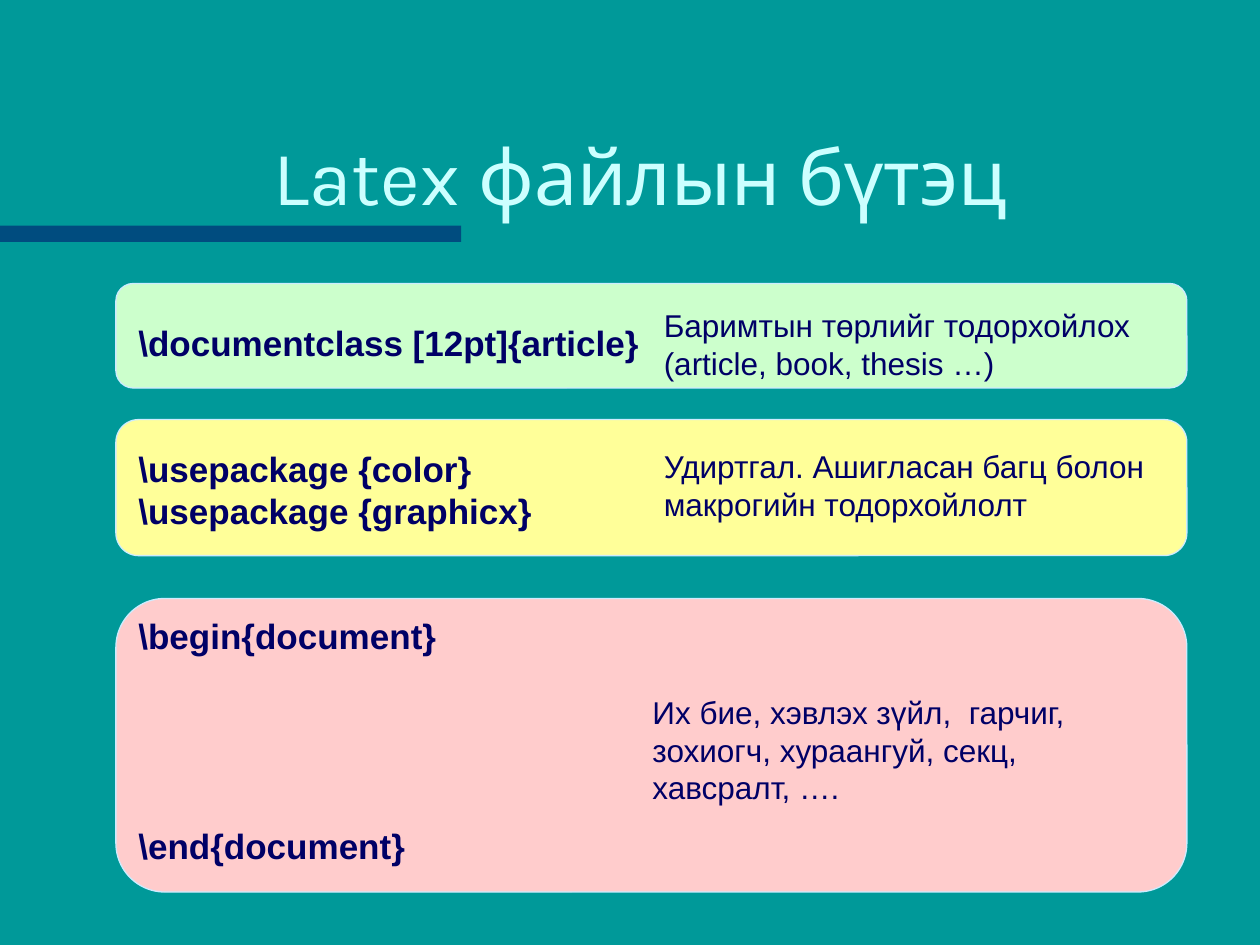
from lxml import etree
from pptx import Presentation
from pptx.dml.color import RGBColor
from pptx.enum.shapes import MSO_SHAPE
from pptx.enum.text import MSO_ANCHOR, PP_ALIGN
from pptx.oxml.ns import qn
from pptx.util import Inches, Pt

RECT, ROUNDED = MSO_SHAPE.RECTANGLE, MSO_SHAPE.ROUNDED_RECTANGLE
MIDDLE, CENTER, LEFT = MSO_ANCHOR.MIDDLE, PP_ALIGN.CENTER, PP_ALIGN.LEFT

NAVY = "000066"
PANEL_X, PANEL_W = 0.92, 8.5
CODE_X, CODE_W, CODE_SIZE = 1, 4.2, 20
NOTE_W, NOTE_SIZE = 4.17, 18
LINE = 1.2  # line pitch as a share of the text size

# Panel: top, height, fill; code: top, lines, gap between lines in lines;
# note: left, top, text
SECTIONS = [
    ((2.25, 0.83, "CCFFCC"),
     (2.5, ["\\documentclass [12pt]{article}"], 0),
     (5.17, 2.38, "Баримтын төрлийг тодорхойлох (article, book, thesis …)")),
    ((3.33, 1.08, "FFFF99"),
     (3.5, ["\\usepackage {color}", "\\usepackage {graphicx}"], 0),
     (5.17, 3.5, "Удиртгал. Ашигласан багц болон макрогийн тодорхойлолт")),
    ((4.75, 2.33, "FFCCCC"),
     (4.83, ["\\begin{document}", "\\end{document}"], 4),
     (5.08, 5.45, "Их бие, хэвлэх зүйл,  гарчиг, зохиогч, хураангуй, "
                  "секц, хавсралт, ….")),
]


def rgb(value):
    return RGBColor.from_string(value)


def box(*lengths):
    return [Inches(v) for v in lengths]


def set_font(p, name, size, color, bold=False):
    p.font.name, p.font.size, p.font.bold = name, Pt(size), bold
    p.font.color.rgb = rgb(color)


def add_title(s, text):
    title = s.shapes.title
    title.left, title.top, title.width, title.height = box(1.75, 0.76, 6.67, 1.25)
    tf = title.text_frame
    tf.text = text
    tf.vertical_anchor = MIDDLE
    p = tf.paragraphs[0]
    p.alignment = CENTER
    set_font(p, "Karla", 44, "CCFFFF")


def add_panel(s, kind, left, top, width, height, fill, line=None):
    sp = s.shapes.add_shape(kind, *box(left, top, width, height))
    sp.shadow.inherit = False
    sp.fill.solid()
    sp.fill.fore_color.rgb = rgb(fill)
    if line:
        sp.line.color.rgb = rgb(line)
        sp.line.width = Pt(0.75)
    else:
        sp.line.fill.background()
    return sp


def set_alpha(sp, percent):
    color = sp.fill._xPr.find(".//" + qn("a:srgbClr"))
    etree.SubElement(color, qn("a:alpha")).set("val", str(percent * 1000))


def add_text(s, left, top, width, lines, size, bold=False, gap=0):
    pitch = size * LINE
    height = (len(lines) + gap * (len(lines) - 1)) * pitch / 72 + 0.1
    tf = s.shapes.add_textbox(*box(left, top, width, height)).text_frame
    tf.word_wrap = True
    for i, line in enumerate(lines):
        p = tf.add_paragraph() if i else tf.paragraphs[0]
        p.text = line
        p.alignment = LEFT
        p.line_spacing = Pt(pitch)
        p.space_before = Pt(gap * pitch if i else 0)
        set_font(p, "Arial", size, NAVY, bold)


def main():
    prs = Presentation()
    prs.slide_width, prs.slide_height = box(10, 7.5)
    s = prs.slides.add_slide(prs.slide_layouts[5])
    s.background.fill.solid()
    s.background.fill.fore_color.rgb = rgb("009999")

    # Title and the half-transparent bar under it
    add_title(s, "Latex файлын бүтэц")
    bar = add_panel(s, RECT, 0, 1.79, 3.66, 0.13, NAVY)
    set_alpha(bar, 50)

    # One panel per part of the file: code left, explanation right
    for (top, height, fill), (code_y, code, gap), (note_x, note_y, note) in SECTIONS:
        add_panel(s, ROUNDED, PANEL_X, top, PANEL_W, height, fill, "CCECFF")
        add_text(s, CODE_X, code_y, CODE_W, code, CODE_SIZE, True, gap)
        add_text(s, note_x, note_y, NOTE_W, [note], NOTE_SIZE)

    prs.save("out.pptx")


if __name__ == "__main__":
    main()
